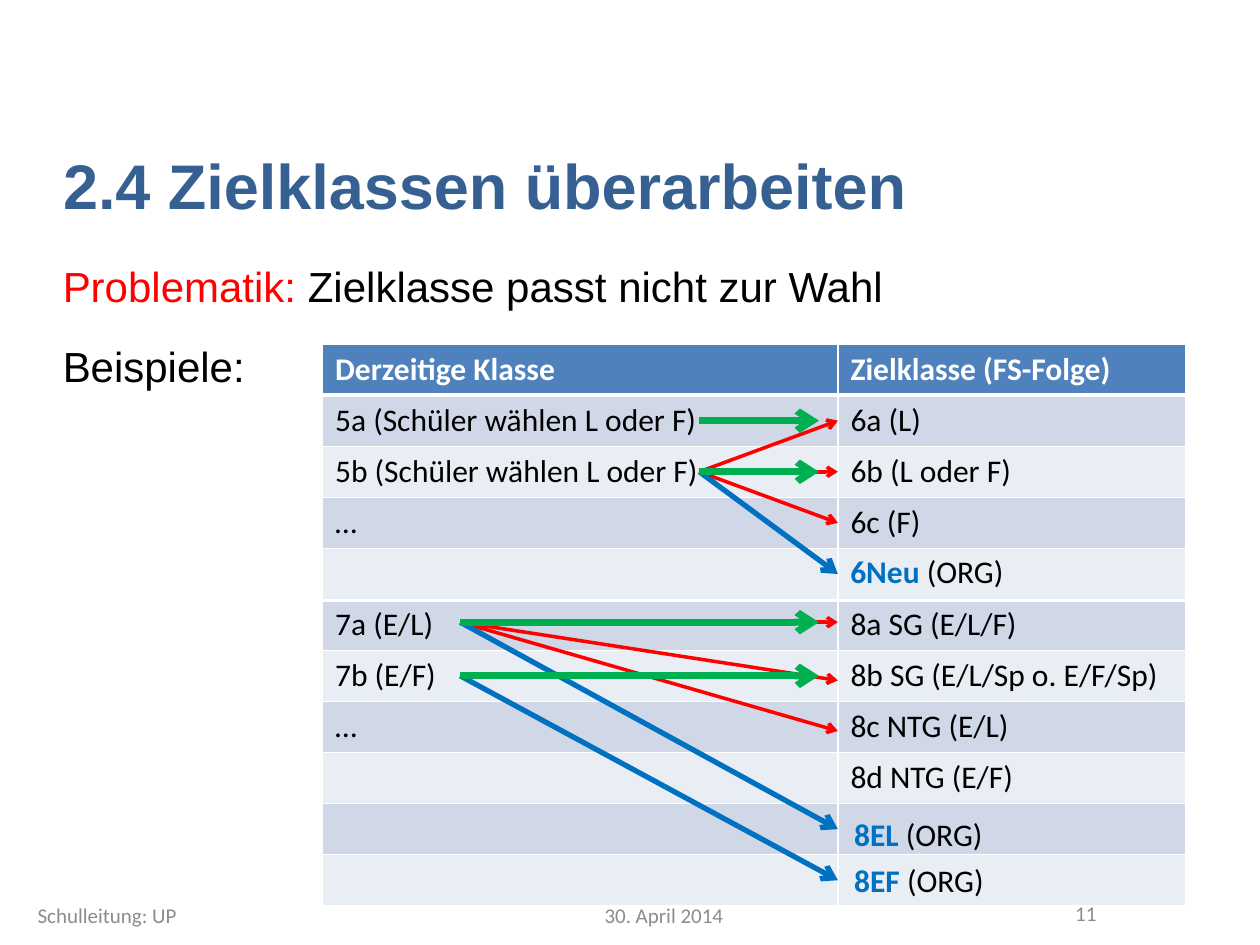
import pptx
import pptx.dml.color
import pptx.enum.shapes
import pptx.enum.text
import pptx.oxml
import pptx.oxml.ns
import pptx.util
from lxml import etree

Pt = pptx.util.Pt
ALIGN = pptx.enum.text.PP_ALIGN
MIDDLE = pptx.enum.text.MSO_ANCHOR.MIDDLE
BLACK, WHITE, GREY = "000000", "FFFFFF", "8C8C8C"
RED, BLUE, GREEN = "FF0000", "0070C0", "00B050"
HEADER_FILL, BAND_FILLS = "4F81BD", ("D0D8E8", "E9EDF4")
COLUMN_WIDTHS = (294.5, 198.7)
ROW_HEIGHT = 29.2

# Arrow ends, measured from the left edge of a table
CLASS_START, CHOICE_START, GREEN_END, TARGET_END = 78.7, 215.3, 283.7, 294.5

CURRENT_ROWS = [
    ("Derzeitige Klasse", "Zielklasse (FS-Folge)"),
    ("5a (Schüler wählen L oder F)", "6a (L)"),
    ("5b (Schüler wählen L oder F)", "6b (L oder F)"),
    ("…", "6c (F)"),
    ("", ""),
]
LATER_ROWS = [
    ("", ""),
    ("7a (E/L)", "8a SG (E/L/F)"),
    ("7b (E/F)", "8b SG (E/L/Sp o. E/F/Sp)"),
    ("…", "8c NTG (E/L)"),
    ("", "8d NTG (E/F)"),
    ("", ""),
    ("", ""),
]
# Start x, start row, end x, end row, colour, width; row 1 is the first below the header
CURRENT_ARROWS = [
    (CHOICE_START, 2, TARGET_END, 2, RED, 2),
    (CHOICE_START, 2, TARGET_END, 1, RED, 2),
    (CHOICE_START, 2, TARGET_END, 3, RED, 2),
    (CHOICE_START, 2, TARGET_END, 4, BLUE, 3),
    (CHOICE_START, 1, GREEN_END, 1, GREEN, 4),
    (CHOICE_START, 2, GREEN_END, 2, GREEN, 4),
]
LATER_ARROWS = [
    (CLASS_START, 0.95, TARGET_END, 0.95, RED, 2),
    (CLASS_START, 0.95, TARGET_END, 2.09, RED, 2),
    (CLASS_START, 0.95, TARGET_END, 3.08, RED, 2),
    (CLASS_START, 0.95, TARGET_END, 5, BLUE, 3),
    (CLASS_START, 2, TARGET_END, 6, BLUE, 3),
    (CLASS_START, 0.95, GREEN_END, 0.95, GREEN, 4),
    (CLASS_START, 2, GREEN_END, 2, GREEN, 4),
]


def rgb(color):
    return pptx.dml.color.RGBColor.from_string(color)


def set_font(font, name, size, color, bold=False):
    font.name, font.size, font.bold = name, Pt(size), bold
    font.color.rgb = rgb(color)


def add_text(slide, box, runs, font_name, size, align=ALIGN.LEFT, anchor=None):
    """Add one line made of (text, colour, bold) runs."""
    shape = slide.shapes.add_textbox(*map(Pt, box))
    frame = shape.text_frame
    frame.word_wrap = True
    frame.vertical_anchor = anchor
    add_runs(frame.paragraphs[0], runs, font_name, size)
    frame.paragraphs[0].alignment = align
    return shape


def add_runs(paragraph, runs, font_name, size):
    for text, color, bold in runs:
        run = paragraph.add_run()
        run.text = text
        set_font(run.font, font_name, size, color, bold)


def set_borders(cell, top, bottom):
    properties = cell._tc.get_or_add_tcPr()
    widths = {"L": 1, "R": 1, "T": top, "B": bottom}
    for position, (side, width) in enumerate(widths.items()):
        line = pptx.oxml.parse_xml(
            f'<a:ln{side} {pptx.oxml.ns.nsdecls("a")} w="{Pt(width)}">'
            f'<a:solidFill><a:srgbClr val="{WHITE}"/></a:solidFill></a:ln{side}>')
        properties.insert(position, line)


def add_class_table(slide, left, top, rows):
    frame = slide.shapes.add_table(
        len(rows), len(COLUMN_WIDTHS), Pt(left), Pt(top),
        Pt(sum(COLUMN_WIDTHS)), Pt(ROW_HEIGHT * len(rows)))
    table = frame.table
    for column, width in zip(table.columns, COLUMN_WIDTHS):
        column.width = Pt(width)
    for row_index, texts in enumerate(rows):
        table.rows[row_index].height = Pt(ROW_HEIGHT)
        is_header = row_index == 0
        for column_index, text in enumerate(texts):
            cell = table.cell(row_index, column_index)
            cell.text = text
            set_font(cell.text_frame.paragraphs[0].font, "Calibri", 18,
                     WHITE if is_header else BLACK, is_header)
            cell.fill.solid()
            cell.fill.fore_color.rgb = rgb(
                HEADER_FILL if is_header else BAND_FILLS[(row_index - 1) % 2])
            set_borders(cell, 3 if row_index == 1 else 1, 3 if is_header else 1)


def add_arrow(slide, start, end, color, width):
    connector = slide.shapes.add_connector(
        pptx.enum.shapes.MSO_CONNECTOR.STRAIGHT, *map(Pt, start + end))
    connector.line.color.rgb = rgb(color)
    connector.line.width = Pt(width)
    qn = pptx.oxml.ns.qn
    etree.SubElement(connector.line._get_or_add_ln(), qn("a:tailEnd"), type="arrow")
    etree.SubElement(connector._element.spPr, qn("a:effectLst"))


def add_class_region(slide, left, top, rows, new_classes, label_box, arrows):
    """Add a table, the label of its new classes and the arrows between its columns."""
    add_class_table(slide, left, top, rows)
    label_left, label_top, width, height = label_box
    label = None
    for name in new_classes:
        runs = [(name + " ", BLUE, True), ("(ORG)", BLACK, False)]
        if label is None:
            box = (left + label_left, top + label_top, width, height)
            label = add_text(slide, box, runs, "Calibri", 18)
        else:
            paragraph = label.text_frame.add_paragraph()
            paragraph.space_before = Pt(4.9)
            add_runs(paragraph, runs, "Calibri", 18)
    for start_x, start_row, end_x, end_row, color, line_width in arrows:
        start = (left + start_x, top + (start_row + 0.5) * ROW_HEIGHT)
        end = (left + end_x, top + (end_row + 0.5) * ROW_HEIGHT)
        add_arrow(slide, start, end, color, line_width)


def add_title(slide, left, top, width, height):
    title = slide.shapes.title
    title.left, title.top, title.width, title.height = map(Pt, (left, top, width, height))
    frame = title.text_frame
    frame.text = "2.4 Zielklassen überarbeiten"
    frame.vertical_anchor = MIDDLE
    frame.paragraphs[0].alignment = ALIGN.LEFT
    set_font(frame.paragraphs[0].font, "Arial", 36, "376092", True)


def add_introduction(slide, left, top, width):
    add_text(slide, (left, top, width, 36),
             [("Problematik: ", RED, False),
              ("Zielklasse passt nicht zur Wahl", BLACK, False)], "Arial", 24)
    add_text(slide, (left, top + 45.4, 126.7, 36),
             [("Beispiele:", BLACK, False)], "Arial", 24)


def add_footer(slide, left, top):
    parts = [
        ("Schulleitung: UP", 0, 187.2, 17.3, ALIGN.LEFT),
        ("30. April 2014", 192.2, 345.6, 17.3, ALIGN.CENTER),
        ("11", 540.7, 78.5, 15.8, ALIGN.RIGHT),
    ]
    for text, offset, width, height, align in parts:
        add_text(slide, (left + offset, top, width, height),
                 [(text, GREY, False)], "Calibri", 12, align, MIDDLE)


def main():
    presentation = pptx.Presentation()
    presentation.slide_width, presentation.slide_height = Pt(720), Pt(540)
    slide = presentation.slides.add_slide(presentation.slide_layouts[5])
    add_title(slide, 28.8, 77, 620, 56.2)
    add_introduction(slide, 28.8, 145.4, 676.8)
    add_footer(slide, 14.4, 514.1)
    # The current classes cover the empty header of the later ones
    add_class_region(slide, 184.3, 313.2, LATER_ROWS, ["8EL", "8EF"],
                     (296.7, 149, 136, 55.4), LATER_ARROWS)
    add_class_region(slide, 184.3, 196.6, CURRENT_ROWS, ["6Neu"],
                     (294.5, 115.2, 108, 28.8), CURRENT_ARROWS)
    presentation.save("out.pptx")


if __name__ == "__main__":
    main()
